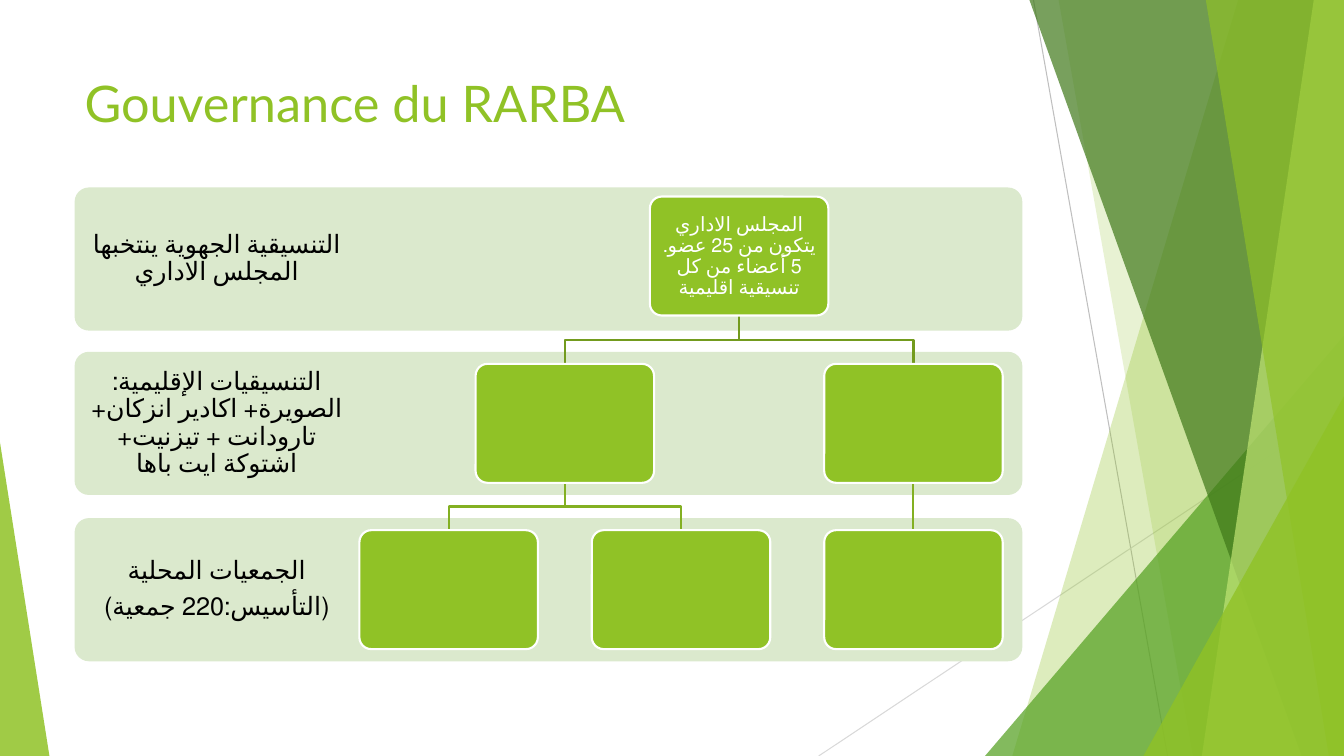
from pptx import Presentation
from pptx.dml.color import RGBColor
from pptx.enum.lang import MSO_LANGUAGE_ID as LANG
from pptx.enum.shapes import MSO_CONNECTOR as LINK, MSO_SHAPE as SHAPE
from pptx.enum.text import MSO_ANCHOR as ANCHOR, PP_ALIGN as ALIGN
from pptx.oxml.ns import qn
from pptx.util import Inches, Pt
from lxml.etree import SubElement

GREEN = RGBColor(0x90, 0xC2, 0x26)
LEAF = RGBColor(0x54, 0xA0, 0x21)
DARK = RGBColor(0x3F, 0x78, 0x19)
LIME = RGBColor(0xC0, 0xE4, 0x74)
PALE = RGBColor(0xDB, 0xE9, 0xCD)
HIGH = RGBColor(0x73, 0x9B, 0x1E)
LOW = RGBColor(0x83, 0xB0, 0x22)
GREY = RGBColor(0xBF, 0xBF, 0xBF)
MIST = RGBColor(0xD9, 0xD9, 0xD9)
BLACK = RGBColor(0, 0, 0)
WHITE = RGBColor(0xFF, 0xFF, 0xFF)

WIDE, TALL = 13.33, 7.5
TITLE = "Gouvernance du RARBA"
BANDS = [
    (1.86, ["التنسيقية الجهوية ينتخبها المجلس الاداري"]),
    (3.49, ["التنسيقيات الإقليمية: الصويرة+ اكادير انزكان+ تارودانت + تيزنيت+ اشتوكة ايت باها"]),
    (5.14, ["الجمعيات المحلية", "(التأسيس:220 جمعية)"]),
]
BOARD = ["المجلس الاداري يتكون من 25 عضو. 5 أعضاء من كل تنسيقية اقليمية"]
RAYS = [
    ((10.25, 0), (11.58, 7.5), GREY),
    ((13.33, 4.03), (8.12, 7.5), MIST),
]
DECOR = [
    ("blade", 12.28, 10.04, GREEN, 30),
    ("blade", 10.5, 11.83, GREEN, 20),
    ("wedge", 9.77, 3.33, 3.56, 1, LEAF, 72),
    ("blade", 10.21, 12.91, DARK, 70),
    ("blade", 13.03, 11.92, LIME, 70),
    ("blade", 11.96, 13.18, GREEN, 65),
    ("wedge", 11.34, 3.93, 1.99, 1, GREEN, 80),
    ("wedge", 0, 4.39, 0.49, 0, GREEN, 85),
]

LEFT, BAND_W, BAND_H, LABEL_W = 0.74, 9.4, 1.42, 2.82
BOX_W, BOX_H = 1.77, 1.18
TOPS = [1.95, 3.61, 5.26]
FIRST, LAST = 4.45, 9.06
MIDS = [FIRST, (FIRST + LAST) / 2, LAST]
PAIR = (MIDS[0] + MIDS[1]) / 2
ROOT = (PAIR + LAST) / 2
TREE = [[ROOT], [PAIR, LAST], MIDS]
EDGES = [
    (0, ROOT, PAIR, HIGH), (0, ROOT, LAST, HIGH),
    (1, PAIR, MIDS[0], LOW), (1, PAIR, MIDS[1], LOW),
    (1, LAST, LAST, LOW),
]

deck = Presentation()
deck.slide_width, deck.slide_height = Inches(WIDE), Inches(TALL)
slide = deck.slides.add_slide(deck.slide_layouts[6])
shapes = slide.shapes


def paint(shape, color, alpha=100):
    shape.shadow.inherit = False
    shape.line.fill.background()
    shape.fill.solid()
    shape.fill.fore_color.rgb = color
    if alpha < 100:
        tint = shape.fill._xPr.find(qn("a:solidFill"))[0]
        SubElement(tint, qn("a:alpha")).set("val", str(alpha * 1000))


def trace(points, close):
    spots = [(Inches(x), Inches(y)) for x, y in points]
    form = shapes.build_freeform(*spots[0], scale=1.0)
    form.add_line_segments(spots[1:], close=close)
    return form.convert_to_shape()


def panel(x, y, w, h, color):
    shape = shapes.add_shape(SHAPE.ROUNDED_RECTANGLE, *map(Inches, (x, y, w, h)))
    shape.adjustments[0] = 0.1
    paint(shape, color)
    return shape


def write(x, y, w, h, lines, size, color, inset, after=0, arabic=True):
    frame = shapes.add_textbox(*map(Inches, (x, y, w, h))).text_frame
    frame.word_wrap = True
    frame.vertical_anchor = ANCHOR.MIDDLE if arabic else ANCHOR.TOP
    frame.margin_left = frame.margin_right = Inches(inset[0])
    frame.margin_top = frame.margin_bottom = Inches(inset[1])
    for i, line in enumerate(lines):
        para = frame.paragraphs[0] if i == 0 else frame.add_paragraph()
        run = para.add_run()
        run.text = line
        run.font.name = "Lato"
        run.font.size = Pt(size)
        run.font.color.rgb = color
        if arabic:
            para.alignment = ALIGN.CENTER
            para.line_spacing = 0.9
            para.space_after = Pt(after)
            para._p.get_or_add_pPr().set("rtl", "1")
            run.font.language_id = LANG.ARABIC_MOROCCO


for start, end, color in RAYS:
    ray = shapes.add_connector(LINK.STRAIGHT, *map(Inches, start + end))
    SubElement(ray._element.spPr, qn("a:effectLst"))
    ray.line.color.rgb = color
    ray.line.width = Pt(0.75)

for kind, *data in DECOR:
    if kind == "blade":
        head, foot, color, alpha = data
        shape = trace([(head, 0), (WIDE, 0), (WIDE, TALL), (foot, TALL)], True)
    else:
        x, y, w, tip, color, alpha = data
        shape = shapes.add_shape(
            SHAPE.ISOSCELES_TRIANGLE, *map(Inches, (x, y, w, TALL - y)))
        shape.adjustments[0] = tip
    paint(shape, color, alpha)

write(LEFT, 0.67, BAND_W, 1.44, [TITLE], 36, GREEN, (0.1, 0.05), arabic=False)

for y, lines in BANDS:
    panel(LEFT, y, BAND_W, BAND_H, PALE)
    write(LEFT, y, LABEL_W, BAND_H, lines, 18, BLACK, (0.14, 0.14), 6.3)

for row, x, goal, color in EDGES:
    y, end = TOPS[row] + BOX_H, TOPS[row + 1]
    mid = (y + end) / 2
    elbow = trace([(x, y), (x, mid), (goal, mid), (goal, end)], False)
    elbow.shadow.inherit = False
    elbow.fill.background()
    elbow.line.color.rgb = color
    elbow.line.width = Pt(1.5)

for y, mids in zip(TOPS, TREE):
    for mid in mids:
        box = panel(mid - BOX_W / 2, y, BOX_W, BOX_H, GREEN)
        box.line.color.rgb = WHITE
        box.line.width = Pt(1.5)

write(ROOT - 0.85, TOPS[0] + 0.04, 1.7, 1.11, BOARD, 14, WHITE, (0.06, 0.06), 4.9)

deck.save("out.pptx")
